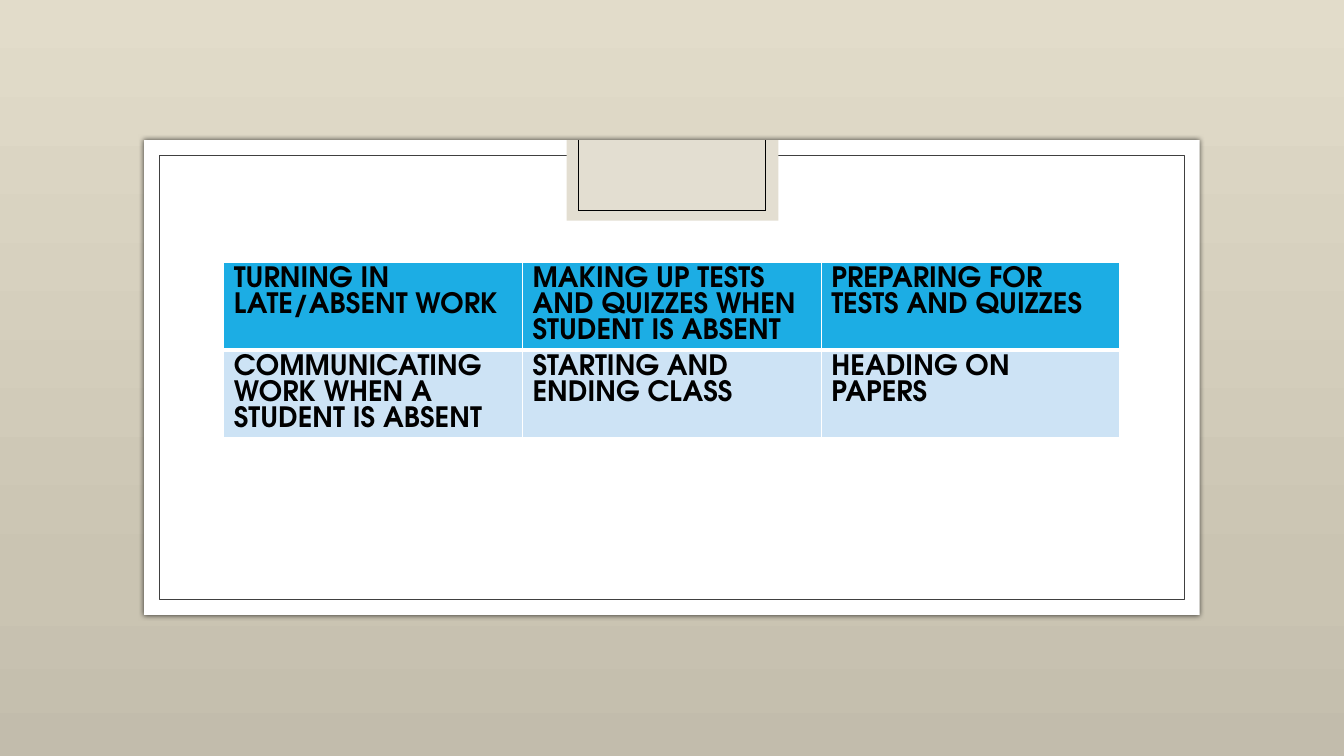
from lxml import etree
from pptx import Presentation, oxml, util as u
from pptx.dml.color import RGBColor
from pptx.enum import shapes
from pptx.oxml.ns import nsdecls, qn

FONT = "TeX Gyre Adventor"
COLORS = {
    "bg_top": "E2DCCA", "bg_mid": "CAC4B2", "bg_bottom": "C2BCAC",
    "card": "FFFFFF", "frame": "404040", "tab": "E3DED1", "ink": "000000",
    "header": "1CADE4", "body": "CDE3F5", "border": "FFFFFF",
}
TOPICS = [
    ["TURNING IN LATE/ABSENT WORK",
     "MAKING UP TESTS AND QUIZZES WHEN STUDENT IS ABSENT",
     "PREPARING FOR TESTS AND QUIZZES"],
    ["COMMUNICATING WORK WHEN A STUDENT IS ABSENT",
     "STARTING AND ENDING CLASS",
     "HEADING ON PAPERS"],
]


def rgb(name):
    return RGBColor.from_string(COLORS[name])


def inches(*values):
    return [u.Inches(v) for v in values]


def write_text(tf, content, size=20, color="ink", bold=True, spacing=None):
    p = tf.paragraphs[0]
    p.line_spacing = spacing
    r = p.add_run()
    r.text = content
    r.font.name, r.font.size, r.font.bold = FONT, u.Pt(size), bold
    r.font.color.rgb = rgb(color)


def add_box(s, box, fill=None, line=None):
    sp = s.shapes.add_shape(shapes.MSO_SHAPE.RECTANGLE, *inches(*box))
    sp.shadow.inherit = False
    if fill:
        sp.fill.solid()
        sp.fill.fore_color.rgb = rgb(fill)
    else:
        sp.fill.background()
    if line:
        sp.line.color.rgb = rgb(line)
        sp.line.width = u.Pt(0.5)
    else:
        sp.line.fill.background()
    return sp


def paint_background(s):
    fill = s.background.fill
    fill.gradient()
    grad = s.background._cSld.find(".//" + qn("a:gradFill"))
    for child in list(grad):
        grad.remove(child)
    stops = "".join(
        f'<a:gs pos="{pos * 1000}"><a:srgbClr val="{COLORS[name]}"/></a:gs>'
        for pos, name in ((0, "bg_top"), (77, "bg_mid"), (100, "bg_bottom")))
    grad.append(oxml.parse_xml(f'<a:gsLst {nsdecls("a")}>{stops}</a:gsLst>'))
    grad.append(oxml.parse_xml(f'<a:lin {nsdecls("a")} ang="5400000" scaled="0"/>'))


def draw_card(s, box):
    left, top, width, height = box
    card = add_box(s, box, fill="card")
    effects = card._element.spPr.find(qn("a:effectLst"))
    effects.append(oxml.parse_xml(
        f'<a:outerShdw {nsdecls("a")} blurRad="{u.Pt(4)}" dist="0" dir="0" rotWithShape="0">'
        f'<a:srgbClr val="{COLORS["ink"]}"><a:alpha val="66000"/></a:srgbClr></a:outerShdw>'))
    inset = 0.15
    add_box(s, (left + inset, top + inset, width - 2 * inset, height - 2 * inset), line="frame")


def draw_tab(s, box):
    left, top, width, height = box
    add_box(s, box, fill="tab")
    x1, x2 = left + 0.12, left + width - 0.13
    bottom = top + height - 0.1
    group = s.shapes.add_group_shape()
    for ends in ((x1, top, x1, bottom), (x2, top, x2, bottom), (x1, bottom, x2, bottom)):
        line = group.shapes.add_connector(shapes.MSO_CONNECTOR.STRAIGHT, *inches(*ends))
        line.line.color.rgb = rgb("ink")
        line.line.width = u.Pt(0.5)
        etree.SubElement(line._element.spPr, qn("a:effectLst"))


def set_borders(cell, bottom):
    tc_pr = cell._tc.get_or_add_tcPr()
    for i, (side, width) in enumerate((("L", 1), ("R", 1), ("T", 1), ("B", bottom))):
        tc_pr.insert(i, oxml.parse_xml(
            f'<a:ln{side} {nsdecls("a")} w="{u.Pt(width)}"><a:solidFill>'
            f'<a:srgbClr val="{COLORS["border"]}"/></a:solidFill></a:ln{side}>'))


def draw_topics(s, box):
    tbl = s.shapes.add_table(len(TOPICS), len(TOPICS[0]), *inches(*box)).table
    for i, row in enumerate(TOPICS):
        for j, topic in enumerate(row):
            cell = tbl.cell(i, j)
            cell.fill.solid()
            cell.fill.fore_color.rgb = rgb("body" if i else "header")
            set_borders(cell, bottom=1 if i else 3)
            write_text(cell.text_frame, topic)


def main():
    prs = Presentation()
    prs.slide_width, prs.slide_height = inches(13.33, 7.5)
    s = prs.slides.add_slide(prs.slide_layouts[6])
    paint_background(s)
    draw_card(s, (1.43, 1.39, 10.47, 4.71))
    draw_tab(s, (5.62, 1.39, 2.1, 0.8))
    draw_topics(s, (2.22, 2.6, 8.89, 0.82))
    prs.save("out.pptx")


if __name__ == "__main__":
    main()
